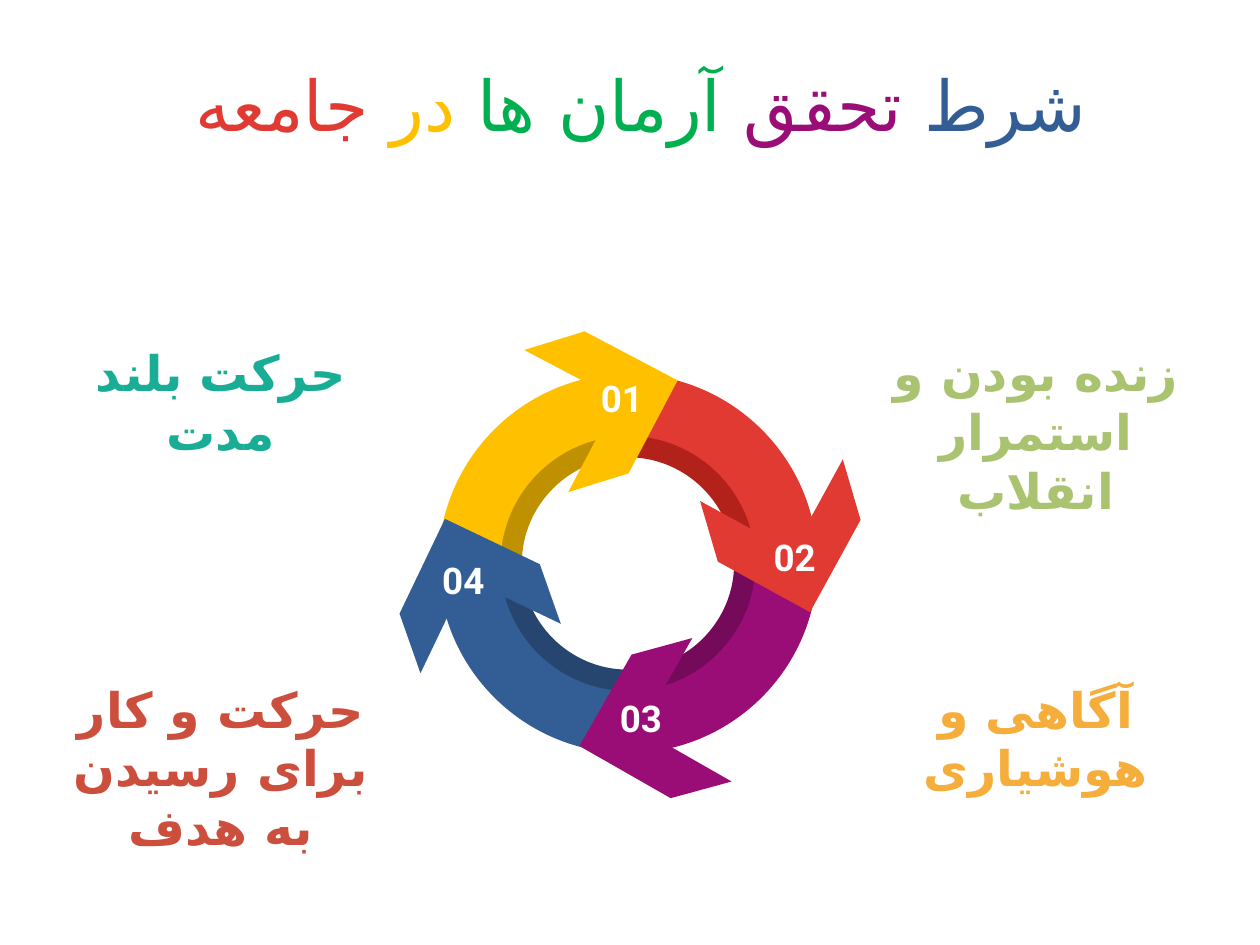
from math import cos, radians, sin

from lxml import etree
from pptx import Presentation
from pptx.dml.color import RGBColor
from pptx.enum.text import MSO_ANCHOR, MSO_AUTO_SIZE, PP_ALIGN
from pptx.oxml.ns import qn
from pptx.util import Cm, Pt

MIDDLE, TOP = MSO_ANCHOR.MIDDLE, MSO_ANCHOR.TOP
NO_FIT, GROW = MSO_AUTO_SIZE.NONE, MSO_AUTO_SIZE.SHAPE_TO_FIT_TEXT
CENTER = PP_ALIGN.CENTER

WHITE = RGBColor(0xFF, 0xFF, 0xFF)
YELLOW = RGBColor(0xFF, 0xC0, 0x00)
RED = RGBColor(0xE0, 0x3A, 0x33)
PURPLE = RGBColor(0x9B, 0x0D, 0x76)
BLUE = RGBColor(0x33, 0x5E, 0x95)
GREEN = RGBColor(0x00, 0xB0, 0x50)
DARK_YELLOW = RGBColor(0xBF, 0x90, 0x00)
DARK_RED = RGBColor(0xB3, 0x21, 0x1B)
DARK_PURPLE = RGBColor(0x74, 0x0A, 0x59)
DARK_BLUE = RGBColor(0x26, 0x46, 0x70)
TEAL = RGBColor(0x1A, 0xAD, 0x96)
OLIVE = RGBColor(0xA9, 0xC3, 0x70)
ORANGE = RGBColor(0xF5, 0xAE, 0x3B)
BRICK = RGBColor(0xCC, 0x4E, 0x3D)

CX, CY = 12.66, 11.36
RING = 3.82, 2.57
INNER_RING = 3.2, 2.14
ARM, THICKNESS = 2.12, 0.9
KAPPA = 0.55

TITLE = [
    ("شرط ", BLUE),
    ("تحقق", PURPLE),
    (" آرمان ها ", GREEN),
    ("در ", YELLOW),
    ("جامعه ", RED),
]
STEPS = [
    ("01", YELLOW, DARK_YELLOW, 180, (13.66, 7.67), 207.8, (11.79, 7.57)),
    ("02", RED, DARK_RED, 270, (16.33, 12.34), 298.7, (15.27, 10.77)),
    ("03", PURPLE, DARK_PURPLE, 0, (11.68, 15.04), 29.7, (12.17, 14.02)),
    ("04", BLUE, DARK_BLUE, 90, (8.97, 10.46), 115.6, (8.59, 11.25)),
]
CAPTIONS = [
    ("حرکت بلند مدت", TEAL, (1.45, 6.91, 6, 1.19)),
    ("زنده بودن و استمرار انقلاب", OLIVE, (17.91, 6.91, 5.94, 2.39)),
    ("آگاهی و هوشیاری", ORANGE, (17.91, 13.69, 5.94, 2.39)),
    ("حرکت و کار برای رسیدن به هدف", BRICK, (1.45, 13.69, 6, 3.58)),
]


class Deck:
    font = "Roboto"
    persian_font = "DejaVu Sans"

    def __init__(self):
        self.prs = Presentation()
        self.prs.slide_width, self.prs.slide_height = Cm(25.4), Cm(19.05)
        self.s = self.prs.slides.add_slide(self.prs.slide_layouts[5])

    def frame(self, sp, anchor, fit):
        tf = sp.text_frame
        tf.word_wrap = True
        tf.auto_size = fit
        tf.vertical_anchor = anchor
        tf.margin_left = tf.margin_right = tf.margin_top = tf.margin_bottom = 0
        return tf

    def style(self, r, size, color, bold=False):
        r.font.size = Pt(size)
        r.font.bold = bold
        r.font.name = self.font
        r.font.color.rgb = color
        cs = etree.SubElement(r.font._element, qn("a:cs"))
        cs.set("typeface", self.persian_font)

    def title(self, parts, box):
        sp = self.s.shapes.title
        sp.left, sp.top, sp.width, sp.height = map(Cm, box)
        p = self.frame(sp, MIDDLE, NO_FIT).paragraphs[0]
        p.alignment = CENTER
        p.line_spacing = 0.9
        p.space_before = Pt(0)
        p._p.get_or_add_pPr().set("rtl", "1")
        for text, color in parts:
            r = p.add_run()
            r.text = text
            self.style(r, 40, color)

    def text(self, text, box, size, color, anchor=TOP, rtl=False):
        sp = self.s.shapes.add_textbox(*map(Cm, box))
        tf = self.frame(sp, anchor, GROW)
        tf.text = text
        p = tf.paragraphs[0]
        p.alignment = CENTER
        p.space_after = Pt(9)
        if rtl:
            p._p.get_or_add_pPr().set("rtl", "1")
        self.style(p.runs[0], size, color, bold=True)

    def outline(self, points, color):
        pts = [(Cm(x), Cm(y)) for x, y in points]
        fb = self.s.shapes.build_freeform(*pts[0])
        fb.add_line_segments(pts[1:], close=True)
        sp = fb.convert_to_shape()
        sp.shadow.inherit = False
        sp.fill.solid()
        sp.fill.fore_color.rgb = color
        sp.line.fill.background()
        return sp

    def quarter_ring(self, radii, start, color):
        ux, uy = cos(radians(start)), sin(radians(start))
        outer, inner = radii
        arc = [(1, 0), (1, KAPPA), (KAPPA, 1), (0, 1)]
        edge = [(outer * a, outer * b) for a, b in arc]
        edge += [(inner * a, inner * b) for a, b in reversed(arc)]
        sp = self.outline([(CX + a * ux - b * uy, CY + a * uy + b * ux)
                           for a, b in edge], color)
        lines = list(sp._element.iter(qn("a:lnTo")))
        for group in (lines[:3], lines[4:]):
            curve = etree.Element(qn("a:cubicBezTo"))
            group[0].addprevious(curve)
            for line in group:
                curve.append(line[0])
                line.getparent().remove(line)

    def chevron(self, tip, angle, color):
        ux, uy = cos(radians(angle)), sin(radians(angle))
        far = ARM + THICKNESS
        corners = [(0, 0), (ARM, 0), (far, THICKNESS), (THICKNESS, THICKNESS),
                   (THICKNESS, far), (0, ARM)]
        self.outline([(tip[0] + a * ux + b * uy, tip[1] + a * uy - b * ux)
                      for a, b in corners], color)


def main():
    deck = Deck()
    deck.title(TITLE, (1.07, 1.27, 23.24, 1.83))
    for _, _, dark, start, *_ in STEPS:
        deck.quarter_ring(INNER_RING, start, dark)
    for _, color, _, start, *_ in STEPS:
        deck.quarter_ring(RING, start, color)
    for number, color, _, _, tip, angle, corner in STEPS:
        deck.chevron(tip, angle, color)
        deck.text(number, (*corner, 1.5, 0.89), 21, WHITE, MIDDLE)
    for text, color, box in CAPTIONS:
        deck.text(text, box, 28, color, rtl=True)
    deck.prs.save("out.pptx")


if __name__ == "__main__":
    main()
